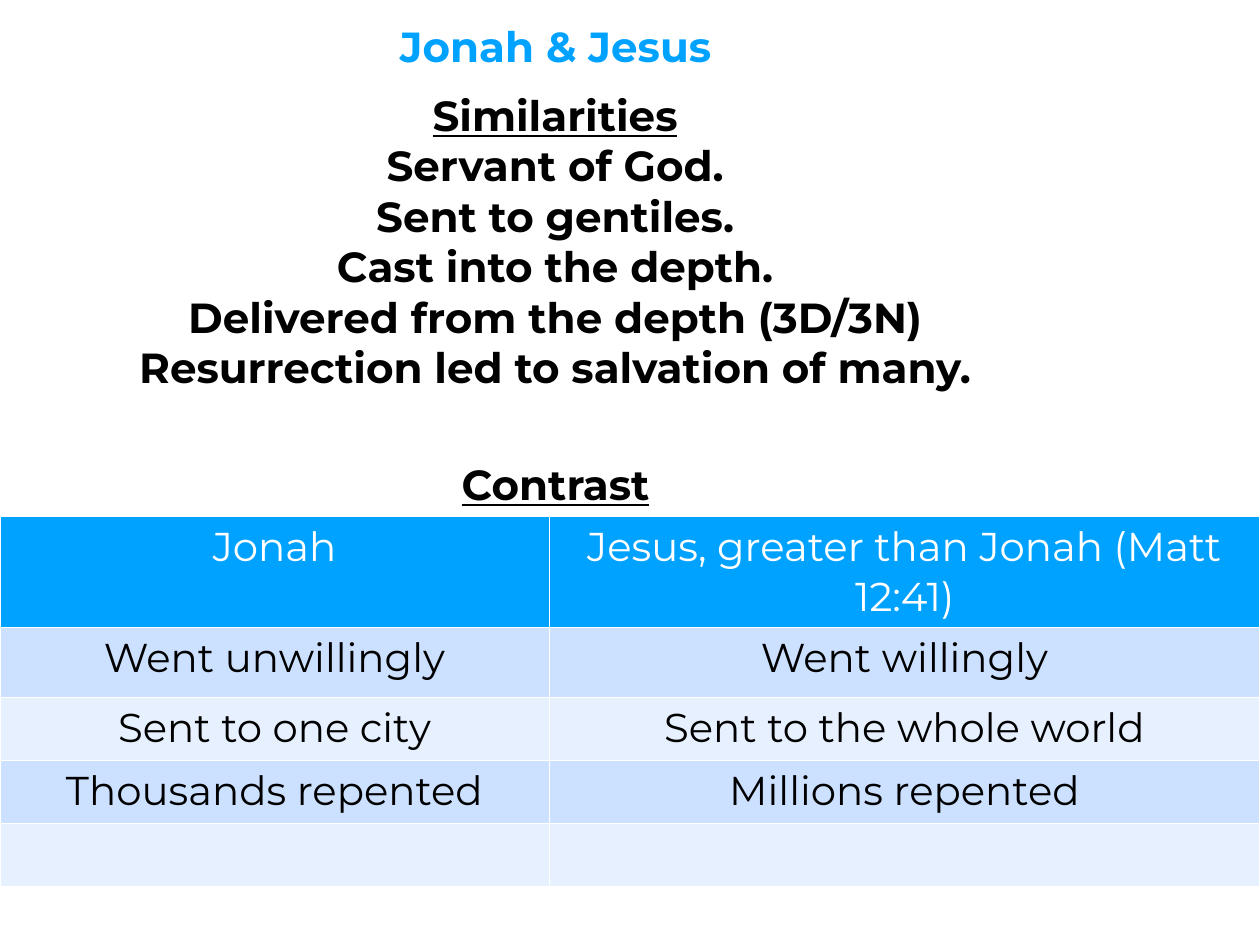
from dataclasses import dataclass

from lxml import etree
from pptx import Presentation
from pptx.dml.color import RGBColor
from pptx.enum.text import MSO_ANCHOR, MSO_AUTO_SIZE, PP_ALIGN
from pptx.oxml.ns import qn
from pptx.util import Pt

CENTER = PP_ALIGN.CENTER
MIDDLE, TOP = MSO_ANCHOR.MIDDLE, MSO_ANCHOR.TOP
NO_FIT = MSO_AUTO_SIZE.NONE
TITLE_ONLY = 5


@dataclass
class Theme:
    face: str = "Montserrat"
    head: int = 24
    cell: int = 23
    blue: str = "00A2FF"
    dark: str = "000000"
    light: str = "FFFFFF"
    bands: tuple = ("CCE0FF", "E7F0FF")
    rule: int = 1
    inset: float = 4.3


class Page:
    def __init__(self, deck, theme):
        self.theme = theme
        self.slide = deck.slides.add_slide(deck.slide_layouts[TITLE_ONLY])

    def label(self, para, text, size, color, **style):
        para.text = text
        para.alignment = CENTER
        style.update(name=self.theme.face, size=Pt(size))
        for key, value in style.items():
            setattr(para.font, key, value)
        para.font.color.rgb = RGBColor.from_string(color)

    def frame(self, shape, box, wrap=False):
        for key, value in zip(("left", "top", "width", "height"), box):
            setattr(shape, key, Pt(value))
        frame = shape.text_frame
        pad = Pt(self.theme.inset)
        form = dict(word_wrap=wrap, auto_size=NO_FIT, vertical_anchor=MIDDLE,
                    margin_left=pad, margin_right=pad,
                    margin_top=pad, margin_bottom=pad)
        for key, value in form.items():
            setattr(frame, key, value)
        return frame

    def title(self, text, box):
        frame = self.frame(self.slide.shapes.title, box)
        self.label(frame.paragraphs[0], text, self.theme.head,
                   self.theme.blue, bold=True)

    def block(self, head, lines, box):
        shape = self.slide.shapes.add_textbox(0, 0, 0, 0)
        frame = self.frame(shape, box)
        for i, text in enumerate([head, *lines]):
            para = frame.add_paragraph() if i else frame.paragraphs[0]
            self.label(para, text, self.theme.head, self.theme.dark,
                       bold=True, underline=i == 0)

    def border(self, cell):
        props = cell._tc.get_or_add_tcPr()
        for i, side in enumerate(("lnL", "lnR", "lnT", "lnB")):
            line = etree.Element(qn("a:" + side), w=str(Pt(self.theme.rule)))
            fill = etree.SubElement(line, qn("a:solidFill"))
            etree.SubElement(fill, qn("a:srgbClr"), val=self.theme.light)
            props.insert(i, line)

    def table(self, rows, left, top, widths, heights):
        theme = self.theme
        grid = self.slide.shapes.add_table(
            len(rows), len(widths), Pt(left), Pt(top),
            Pt(sum(widths)), Pt(sum(heights))).table
        for col, width in zip(grid.columns, widths):
            col.width = Pt(width)
        for r, (row, height) in enumerate(zip(rows, heights)):
            grid.rows[r].height = Pt(height)
            back = theme.bands[(r - 1) % 2] if r else theme.blue
            ink = theme.dark if r else theme.light
            for c, text in enumerate(row):
                cell = grid.cell(r, c)
                cell.vertical_anchor = TOP
                cell.fill.solid()
                cell.fill.fore_color.rgb = RGBColor.from_string(back)
                self.border(cell)
                self.label(cell.text_frame.paragraphs[0], text,
                           theme.cell, ink, bold=False)


def main():
    deck = Presentation()
    deck.slide_width, deck.slide_height = Pt(720), Pt(540)
    page = Page(deck, Theme())

    # Title and similarities
    page.title("Jonah & Jesus", (216, 7.2, 203, 37.4))
    page.block("Similarities", [
        "Servant of God.",
        "Sent to gentiles.",
        "Cast into the depth.",
        "Delivered from the depth (3D/3N)",
        "Resurrection led to salvation of many.",
    ], (61.2, 46, 512, 183))

    # Contrast table and its heading
    page.table([
        ("Jonah", "Jesus, greater than Jonah (Matt 12:41)"),
        ("Went unwillingly", "Went willingly"),
        ("Sent to one city", "Sent to the whole world"),
        ("Thousands repented", "Millions repented"),
        ("", ""),
    ], 0, 295.2, (314, 406), (62, 40, 36, 36, 36))
    page.block("Contrast", [], (256.3, 257.8, 122.4, 37.4))

    deck.save("out.pptx")


if __name__ == "__main__":
    main()
